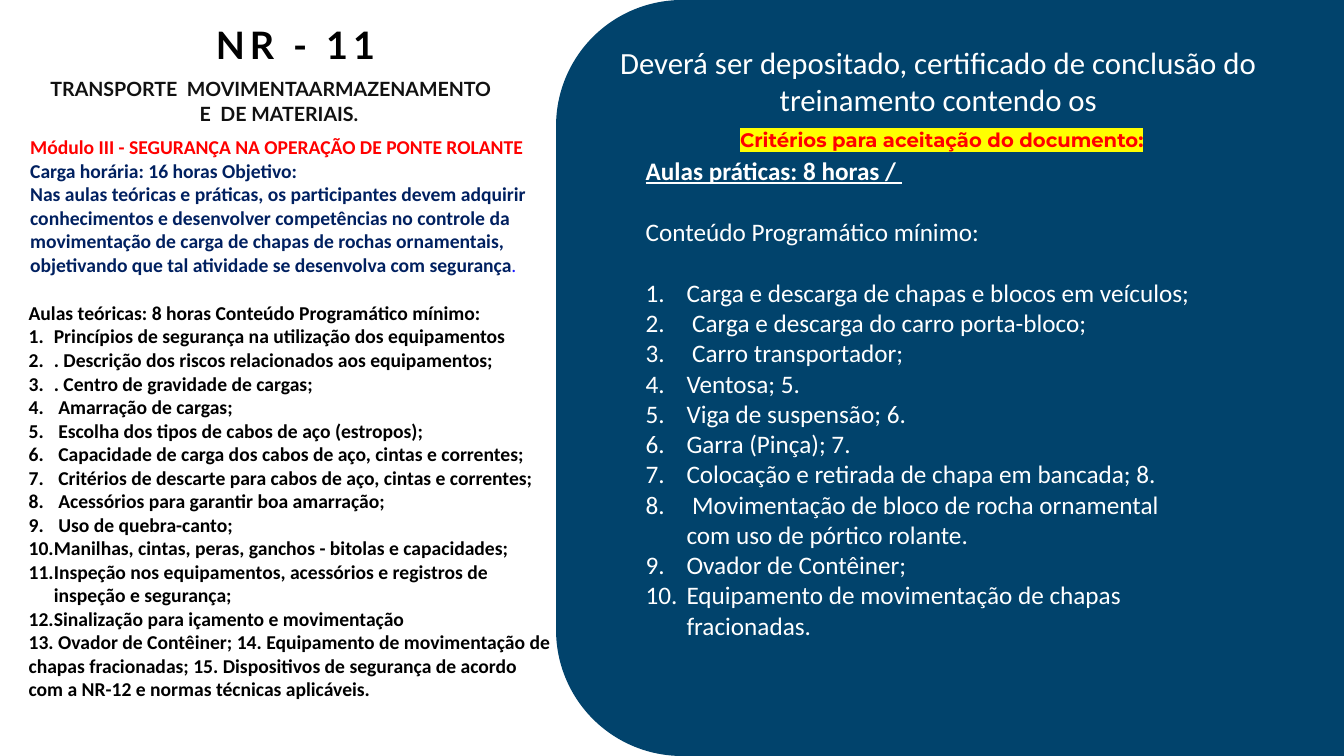
from dataclasses import dataclass
from typing import Optional

import pptx
import pptx.dml.color
import pptx.enum.shapes
import pptx.enum.text
import pptx.oxml
import pptx.oxml.ns
import pptx.util

Inches = pptx.util.Inches
Pt = pptx.util.Pt
Align = pptx.enum.text.PP_ALIGN
Shape = pptx.enum.shapes.MSO_SHAPE


@dataclass(frozen=True)
class Theme:
    panel: str = "01436C"
    white: str = "FFFFFF"
    black: str = "000000"
    charcoal: str = "111111"
    navy: str = "002060"
    blue: str = "1818FF"
    red: str = "FF0000"
    yellow: str = "FFFF00"
    title: int = 54
    heading: int = 44
    practice: int = 36
    body: int = 28


THEME = Theme()


@dataclass(frozen=True)
class Run:
    text: str
    color: str
    size: int = THEME.body
    name: str = "Calibri"
    bold: bool = True
    underline: bool = False
    spacing: float = 0
    highlight: Optional[str] = None


@dataclass(frozen=True)
class Paragraph:
    runs: tuple[Run, ...]
    alignment: Align = Align.LEFT
    line_spacing: Optional[float] = None
    space_before: float = 0
    margin: float = 0
    hanging: float = 0  # a hanging indent makes a numbered item


@dataclass(frozen=True)
class TextBox:
    box: tuple[float, float, float, float]
    paragraphs: tuple[Paragraph, ...]
    inset: tuple[float, float] = (0.1, 0.05)


@dataclass(frozen=True)
class Panel:
    kind: Shape
    box: tuple[float, float, float, float]


def draw_panel(slide, panel: Panel) -> None:
    shape = slide.shapes.add_shape(panel.kind, *map(Inches, panel.box))
    shape.shadow.inherit = False
    shape.fill.solid()
    shape.fill.fore_color.rgb = pptx.dml.color.RGBColor.from_string(THEME.panel)
    shape.line.fill.background()


def write_run(paragraph, item: Run) -> None:
    run = paragraph.add_run()
    run.text = item.text
    formats = {"name": item.name, "size": Pt(item.size), "bold": item.bold, "underline": item.underline}
    for name, value in formats.items():
        setattr(run.font, name, value)
    run.font.color.rgb = pptx.dml.color.RGBColor.from_string(item.color)
    properties = run._r.get_or_add_rPr()
    if item.spacing:
        properties.set("spc", str(round(item.spacing * 100)))
    if item.highlight:
        properties.find(pptx.oxml.ns.qn("a:solidFill")).addnext(pptx.oxml.parse_xml(
            f'<a:highlight {pptx.oxml.ns.nsdecls("a")}><a:srgbClr val="{item.highlight}"/></a:highlight>'))


def write_paragraph(paragraph, item: Paragraph) -> None:
    properties = paragraph._p.get_or_add_pPr()
    properties.set("marL", str(Inches(item.margin + item.hanging)))
    properties.set("indent", str(-Inches(item.hanging)))
    if item.hanging:
        properties.append(pptx.oxml.parse_xml(
            f'<a:buAutoNum {pptx.oxml.ns.nsdecls("a")} type="arabicPeriod"/>'))
    formats = {
        "alignment": item.alignment,
        "space_before": Pt(item.space_before),
        "line_spacing": Pt(item.line_spacing) if item.line_spacing else None,
    }
    for name, value in formats.items():
        setattr(paragraph, name, value)
    for run in item.runs:
        write_run(paragraph, run)


def write_text(shape, item: TextBox) -> None:
    for name, value in zip(("left", "top", "width", "height"), item.box):
        setattr(shape, name, Inches(value))
    frame = shape.text_frame
    horizontal, vertical = map(Inches, item.inset)
    formats = {
        "word_wrap": True,
        "auto_size": pptx.enum.text.MSO_AUTO_SIZE.SHAPE_TO_FIT_TEXT,
        "vertical_anchor": pptx.enum.text.MSO_ANCHOR.TOP,
        "margin_left": horizontal, "margin_right": horizontal,
        "margin_top": vertical, "margin_bottom": vertical,
    }
    for name, value in formats.items():
        setattr(frame, name, value)
    for index, paragraph in enumerate(item.paragraphs):
        write_paragraph(frame.add_paragraph() if index else frame.paragraphs[0], paragraph)


def numbered(lines: tuple[str, ...], hanging: float, first_gap: float = 0, **look) -> tuple[Paragraph, ...]:
    return tuple(
        Paragraph((Run(line, **look),), hanging=hanging, space_before=0 if index else first_gap)
        for index, line in enumerate(lines))


THEORY_TOPICS = (
    "Princípios de segurança na utilização dos equipamentos",
    ". Descrição dos riscos relacionados aos equipamentos;",
    ". Centro de gravidade de cargas;",
    " Amarração de cargas;",
    " Escolha dos tipos de cabos de aço (estropos);",
    " Capacidade de carga dos cabos de aço, cintas e correntes;",
    " Critérios de descarte para cabos de aço, cintas e correntes;",
    " Acessórios para garantir boa amarração;",
    " Uso de quebra-canto;",
    "Manilhas, cintas, peras, ganchos - bitolas e capacidades;",
    "Inspeção nos equipamentos, acessórios e registros de inspeção e segurança;",
    "Sinalização para içamento e movimentação",
)
PRACTICE_TOPICS = (
    "Carga e descarga de chapas e blocos em veículos;",
    " Carga e descarga do carro porta-bloco;",
    " Carro transportador;",
    "Ventosa; 5.",
    "Viga de suspensão; 6.",
    "Garra (Pinça); 7.",
    "Colocação e retirada de chapa em bancada; 8.",
    " Movimentação de bloco de rocha ornamental com uso de pórtico rolante.",
    "Ovador de Contêiner;",
    "Equipamento de movimentação de chapas fracionadas.",
)
PANELS = (Panel(Shape.RECTANGLE, (14.27, 0, 12.39, 15)), Panel(Shape.ROUNDED_RECTANGLE, (11.03, 0, 15.17, 15)))
PRACTICE = {"color": THEME.white, "size": THEME.practice, "bold": False}
PRACTICE_GAP = 44  # one line of the practice text
SUBTITLE = {"color": THEME.charcoal, "name": "Lato"}

TITLE = TextBox((4.28, 0.44, 5.83, 0.9), (
    Paragraph((Run("NR - 11", THEME.black, THEME.title, "Lato", spacing=7.1),), line_spacing=63.7),
), inset=(0, 0))

TEXT_BOXES = (
    # Certificate heading and acceptance criteria
    TextBox((11.97, 0.81, 13.29, 2.32), (
        Paragraph((Run("Deverá ser depositado, certificado de conclusão do treinamento contendo os",
                       THEME.white, THEME.heading, bold=False),), Align.CENTER),
        Paragraph((Run("Critérios para aceitação do documento:", THEME.red, name="Montserrat",
                       highlight=THEME.yellow),), Align.CENTER, space_before=15, margin=0.13),
    )),
    # Subtitle
    TextBox((-0.26, 1.46, 11.03, 1.05), (
        Paragraph((Run("TRANSPORTE  MOVIMENTAARMAZENAMENTO", **SUBTITLE),), Align.CENTER, 35, margin=0.23),
        Paragraph((Run("E  DE MATERIAIS.", **SUBTITLE),), Align.CENTER, 35, margin=0.56),
    )),
    # Module and objective
    TextBox((0.5, 2.63, 10.07, 2.93), (
        Paragraph((Run("Módulo III - SEGURANÇA NA OPERAÇÃO DE PONTE ROLANTE", THEME.red),
                   Run(" Carga horária: 16 horas Objetivo:", THEME.navy))),
        Paragraph((Run("Nas aulas teóricas e práticas, os participantes devem adquirir conhecimentos e "
                       "desenvolver competências no controle da movimentação de carga de chapas de rochas "
                       "ornamentais, objetivando que tal atividade se desenvolva com segurança", THEME.navy),
                   Run(".", THEME.blue, bold=False))),
    )),
    # Theory classes
    TextBox((0.47, 5.92, 10.56, 8.11), (
        Paragraph((Run("Aulas teóricas: 8 horas Conteúdo Programático mínimo:", THEME.black),)),
        *numbered(THEORY_TOPICS, 0.5, color=THEME.black),
        Paragraph((Run("13. Ovador de Contêiner; 14. Equipamento de movimentação de chapas fracionadas; "
                       "15. Dispositivos de segurança de acordo com a NR-12 e normas técnicas aplicáveis.",
                       THEME.black),)),
    )),
    # Practice classes
    TextBox((12.71, 3.03, 11.33, 9.79), (
        Paragraph((Run("Aulas práticas: 8 horas / ", THEME.white, THEME.practice, underline=True),)),
        Paragraph((Run("Conteúdo Programático mínimo:", **PRACTICE),), space_before=PRACTICE_GAP),
        *numbered(PRACTICE_TOPICS, 0.81, PRACTICE_GAP, **PRACTICE),
    )),
)


def main() -> None:
    presentation = pptx.Presentation()
    presentation.slide_width = Inches(26.66)
    presentation.slide_height = Inches(15)
    slide = presentation.slides.add_slide(presentation.slide_layouts[5])
    for panel in PANELS:
        draw_panel(slide, panel)
    write_text(slide.shapes.title, TITLE)
    for item in TEXT_BOXES:
        write_text(slide.shapes.add_textbox(*map(Inches, item.box)), item)
    presentation.save("out.pptx")


if __name__ == "__main__":
    main()
